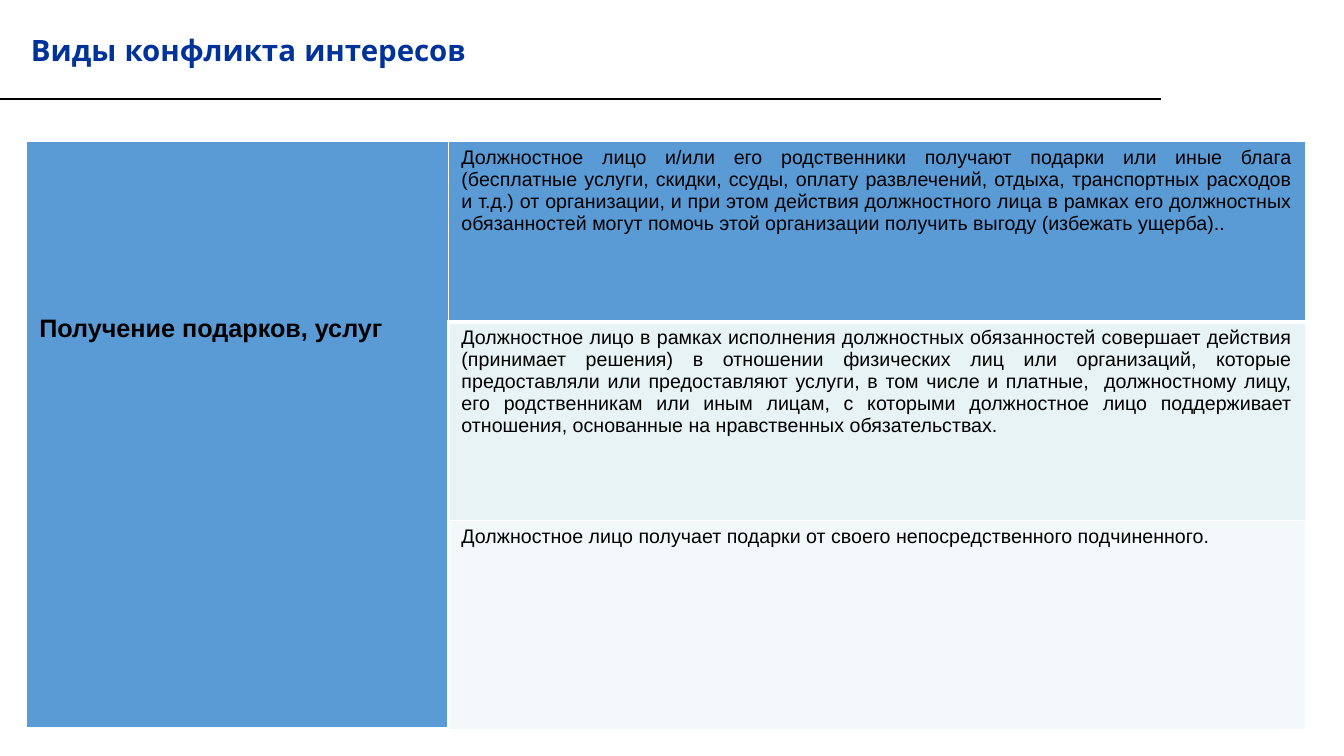
from dataclasses import dataclass

from lxml import etree
from pptx import Presentation
from pptx import util as u
from pptx.dml.color import RGBColor
from pptx.enum import shapes, text
from pptx.oxml import ns

BLACK, WHITE, NAVY, BLUE = "000000", "FFFFFF", "003399", "5B9BD5"
COLUMN_WIDTHS = (10.64, 21.59)
ROW_HEIGHTS = (4.55, 5.0, 5.18)


@dataclass
class Entry:
    row: int
    column: int
    wording: str
    fill: str
    borders: tuple[int, int, int, int]  # left, right, top, bottom, in points
    size: int = 14
    bold: bool = False
    align: text.PP_ALIGN = text.PP_ALIGN.JUSTIFY
    space_after: int = 0
    top_margin: float = 0.13


ENTRIES = [
    Entry(0, 0, "Получение подарков, услуг", BLUE, (1, 1, 1, 3), size=18, bold=True,
          align=text.PP_ALIGN.LEFT, top_margin=4.37),
    Entry(0, 1, "Должностное лицо и/или его родственники получают подарки или иные блага "
          "(бесплатные услуги, скидки, ссуды, оплату развлечений, отдыха, транспортных "
          "расходов и т.д.) от организации, и при этом действия должностного лица в рамках "
          "его должностных обязанностей могут помочь этой организации получить выгоду "
          "(избежать ущерба)..", BLUE, (1, 1, 1, 3), space_after=10),
    Entry(1, 1, "Должностное лицо в рамках исполнения должностных обязанностей совершает "
          "действия (принимает решения) в отношении физических лиц или организаций, которые "
          "предоставляли или предоставляют услуги, в том числе и платные,  должностному "
          "лицу, его родственникам или иным лицам, с которыми должностное лицо поддерживает "
          "отношения, основанные на нравственных обязательствах.", "E7F3F4", (3, 1, 3, 1)),
    Entry(2, 1, "Должностное лицо получает подарки от своего непосредственного подчиненного.",
          "F3F9FA", (3, 1, 1, 1)),
]


def color(value: str) -> RGBColor:
    return RGBColor.from_string(value)


def style_font(paragraph, name: str, size: int, tint: str, bold: bool) -> None:
    for run in paragraph.runs:
        run.font.name = name
        run.font.size = u.Pt(size)
        run.font.color.rgb = color(tint)
        run.font.bold = bold


def set_borders(cell, widths: tuple[int, int, int, int]) -> None:
    properties = cell._tc.get_or_add_tcPr()
    for index, (side, width) in enumerate(zip("LRTB", widths)):
        edge = etree.Element(ns.qn(f"a:ln{side}"), w=str(u.Pt(width)))
        solid = etree.SubElement(edge, ns.qn("a:solidFill"))
        etree.SubElement(solid, ns.qn("a:srgbClr"), val=WHITE)
        properties.insert(index, edge)


def fill_entry(table, entry: Entry) -> None:
    cell = table.cell(entry.row, entry.column)
    cell.fill.solid()
    cell.fill.fore_color.rgb = color(entry.fill)
    set_borders(cell, entry.borders)
    cell.margin_left = cell.margin_right = u.Cm(0.33)
    cell.margin_top, cell.margin_bottom = u.Cm(entry.top_margin), u.Cm(0.13)
    paragraph = cell.text_frame.paragraphs[0]
    paragraph.text = entry.wording
    paragraph.alignment = entry.align
    paragraph.space_after = u.Pt(entry.space_after)
    style_font(paragraph, "Arial", entry.size, BLACK, entry.bold)


def add_heading(slide) -> None:
    heading = slide.shapes.add_textbox(u.Cm(0.53), u.Cm(0.69), u.Cm(15.72), u.Cm(1.24))
    frame = heading.text_frame
    frame.word_wrap = True
    frame.vertical_anchor = text.MSO_ANCHOR.MIDDLE
    frame.text = "Виды конфликта интересов"
    frame.paragraphs[0].line_spacing = 0.9
    style_font(frame.paragraphs[0], "Quicksand", 21, NAVY, True)


def add_heading_rule(slide) -> None:
    rule = slide.shapes.add_connector(
        shapes.MSO_CONNECTOR.STRAIGHT, u.Cm(0), u.Cm(2.49), u.Cm(29.26), u.Cm(2.49))
    rule.line.color.rgb = color(BLACK)
    rule.line.width = u.Pt(1.5)
    etree.SubElement(rule._element.spPr, ns.qn("a:effectLst"))


def add_conflict_table(slide) -> None:
    table = slide.shapes.add_table(
        len(ROW_HEIGHTS), len(COLUMN_WIDTHS), u.Cm(0.66), u.Cm(3.56),
        u.Cm(sum(COLUMN_WIDTHS)), u.Cm(sum(ROW_HEIGHTS))).table
    for column, width in zip(table.columns, COLUMN_WIDTHS):
        column.width = u.Cm(width)
    for row, height in zip(table.rows, ROW_HEIGHTS):
        row.height = u.Cm(height)
    table.cell(0, 0).merge(table.cell(2, 0))
    for entry in ENTRIES:
        fill_entry(table, entry)
    # Cells hidden under the merged one share its fill
    for row in (1, 2):
        covered = table.cell(row, 0)
        covered.fill.solid()
        covered.fill.fore_color.rgb = color(BLUE)


def main() -> None:
    deck = Presentation()
    deck.slide_width, deck.slide_height = u.Cm(33.87), u.Cm(19.05)
    slide = deck.slides.add_slide(deck.slide_layouts[6])
    add_heading(slide)
    add_conflict_table(slide)
    add_heading_rule(slide)
    deck.save("out.pptx")


if __name__ == "__main__":
    main()
